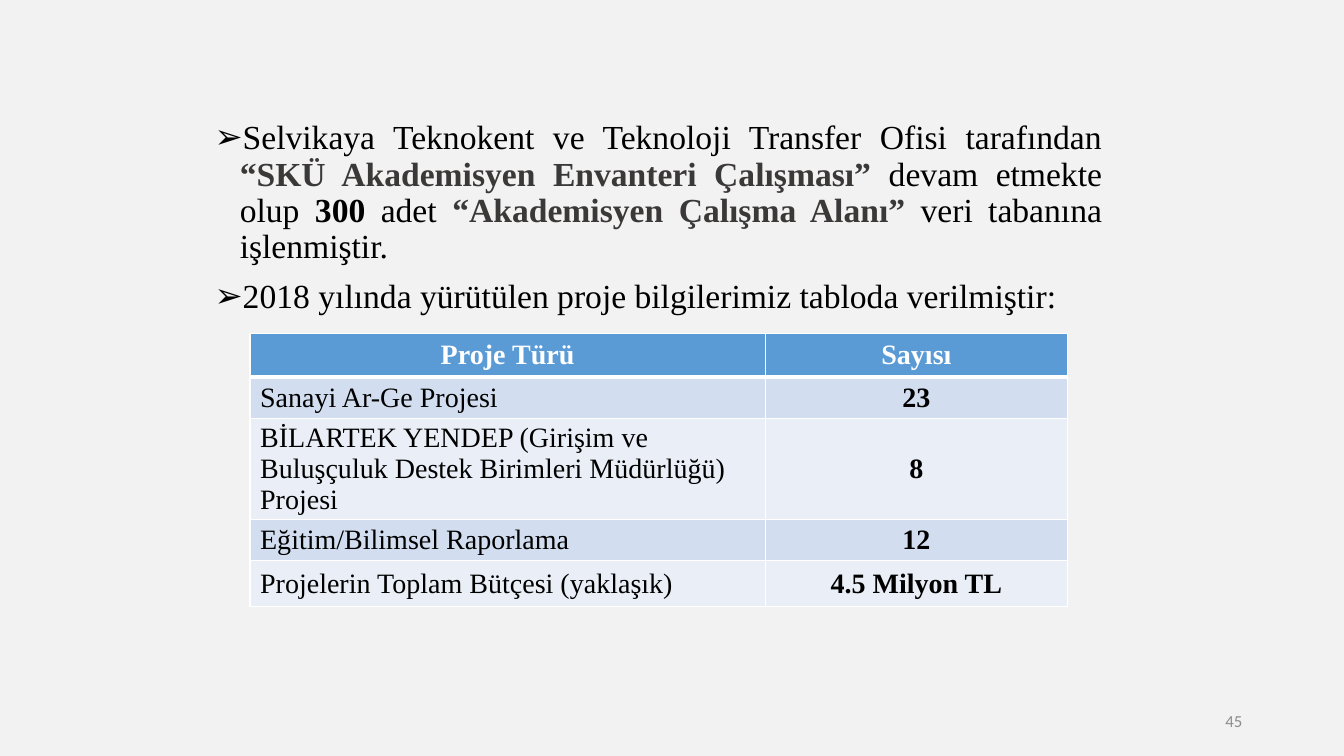
from dataclasses import dataclass
from lxml import etree
from pptx import Presentation
from pptx.dml.color import RGBColor
from pptx.enum.text import MSO_ANCHOR, PP_ALIGN
from pptx.oxml.ns import qn
from pptx.util import Inches, Pt

MIDDLE = MSO_ANCHOR.MIDDLE
LEFT, CENTER, RIGHT, JUSTIFY = PP_ALIGN.LEFT, PP_ALIGN.CENTER, PP_ALIGN.RIGHT, PP_ALIGN.JUSTIFY


@dataclass(frozen=True)
class Theme:
    background: str = "F2F2F2"
    ink: str = "000000"
    emphasis: str = "3B3838"
    muted: str = "8C8C8C"
    white: str = "FFFFFF"
    header: str = "5B9BD5"
    bands: tuple = ("D2DEEF", "EAEFF7")
    serif: str = "Times New Roman"
    sans: str = "Calibri"
    body_size: int = 24
    table_size: int = 20
    number_size: int = 12


THEME = Theme()
WIDTH, HEIGHT = 13.33, 7.5

STATEMENTS = [
    [("Selvikaya Teknokent ve Teknoloji Transfer Ofisi tarafından ", THEME.ink, False),
     ("“SKÜ Akademisyen Envanteri Çalışması” ", THEME.emphasis, True),
     ("devam etmekte olup ", THEME.ink, False),
     ("300", THEME.ink, True),
     (" adet ", THEME.ink, False),
     ("“Akademisyen Çalışma Alanı”", THEME.emphasis, True),
     (" veri tabanına işlenmiştir.", THEME.ink, False)],
    [("2018 yılında yürütülen proje bilgilerimiz tabloda verilmiştir:", THEME.ink, False)],
]

PROJECTS = [
    ("Proje Türü", "Sayısı"),
    ("Sanayi Ar-Ge Projesi", "23"),
    ("BİLARTEK YENDEP (Girişim ve Buluşçuluk Destek Birimleri Müdürlüğü) Projesi", "8"),
    ("Eğitim/Bilimsel Raporlama", "12"),
    ("Projelerin Toplam Bütçesi (yaklaşık)", "4.5 Milyon TL"),
]
COLUMN_SHARES = (0.63, 0.37)
ROW_HEIGHTS = (0.43, 0.41, 0.72, 0.41, 0.46)


def style(run, font, size, color, bold=False):
    run.font.name = font
    run.font.size = Pt(size)
    run.font.bold = bold
    run.font.color.rgb = RGBColor.from_string(color)


def add_frame(slide, box):
    frame = slide.shapes.add_textbox(*map(Inches, box)).text_frame
    frame.word_wrap = True
    return frame


def add_bullet(paragraph, indent=0.25):
    properties = paragraph._p.get_or_add_pPr()
    properties.set("marL", str(Inches(indent)))
    properties.set("indent", str(Inches(-indent)))
    etree.SubElement(properties, qn("a:buFont")).set("typeface", THEME.sans)
    etree.SubElement(properties, qn("a:buChar")).set("char", "➢")


def add_statements(slide, box):
    frame = add_frame(slide, box)
    for index, statement in enumerate(STATEMENTS):
        paragraph = frame.add_paragraph() if index else frame.paragraphs[0]
        paragraph.alignment = JUSTIFY
        paragraph.line_spacing = 0.9
        paragraph.space_before = Pt(10 if index else 0)
        add_bullet(paragraph)
        for wording, color, bold in statement:
            run = paragraph.add_run()
            run.text = wording
            style(run, THEME.serif, THEME.body_size, color, bold)


def add_borders(cell, bottom_width):
    properties = cell._tc.get_or_add_tcPr()
    sides = {"a:lnL": 1, "a:lnR": 1, "a:lnT": 1, "a:lnB": bottom_width}
    for position, (side, width) in enumerate(sides.items()):
        line = etree.Element(qn(side), w=str(Pt(width)))
        fill = etree.SubElement(line, qn("a:solidFill"))
        etree.SubElement(fill, qn("a:srgbClr")).set("val", THEME.white)
        properties.insert(position, line)


def add_projects(slide, box):
    table = slide.shapes.add_table(
        len(PROJECTS), len(COLUMN_SHARES), *map(Inches, box)).table
    for column, share in zip(table.columns, COLUMN_SHARES):
        column.width = Inches(box[2] * share)
    for r, (row, height) in enumerate(zip(PROJECTS, ROW_HEIGHTS)):
        table.rows[r].height = Inches(height)
        is_header = r == 0
        for c, wording in enumerate(row):
            cell = table.cell(r, c)
            cell.vertical_anchor = MIDDLE
            cell.margin_top = cell.margin_bottom = 0
            cell.fill.solid()
            cell.fill.fore_color.rgb = RGBColor.from_string(
                THEME.header if is_header else THEME.bands[(r - 1) % 2])
            add_borders(cell, 3 if is_header else 1)
            paragraph = cell.text_frame.paragraphs[0]
            paragraph.text = wording
            paragraph.alignment = CENTER if is_header or c else LEFT
            style(paragraph.runs[0], THEME.serif, THEME.table_size,
                  THEME.white if is_header else THEME.ink, is_header or c > 0)


def add_page_number(slide, box):
    frame = add_frame(slide, box)
    frame.vertical_anchor = MIDDLE
    paragraph = frame.paragraphs[0]
    paragraph.text = "45"
    paragraph.alignment = RIGHT
    style(paragraph.runs[0], THEME.sans, THEME.number_size, THEME.muted)


def main():
    deck = Presentation()
    deck.slide_width, deck.slide_height = Inches(WIDTH), Inches(HEIGHT)
    slide = deck.slides.add_slide(deck.slide_layouts[6])
    slide.background.fill.solid()
    slide.background.fill.fore_color.rgb = RGBColor.from_string(THEME.background)
    add_statements(slide, (2.03, 1.15, 9, 2.1))
    add_page_number(slide, (9.42, 6.95, 3, 0.4))
    add_projects(slide, (2.48, 3.31, 8.11, sum(ROW_HEIGHTS)))
    deck.save("out.pptx")


if __name__ == "__main__":
    main()
